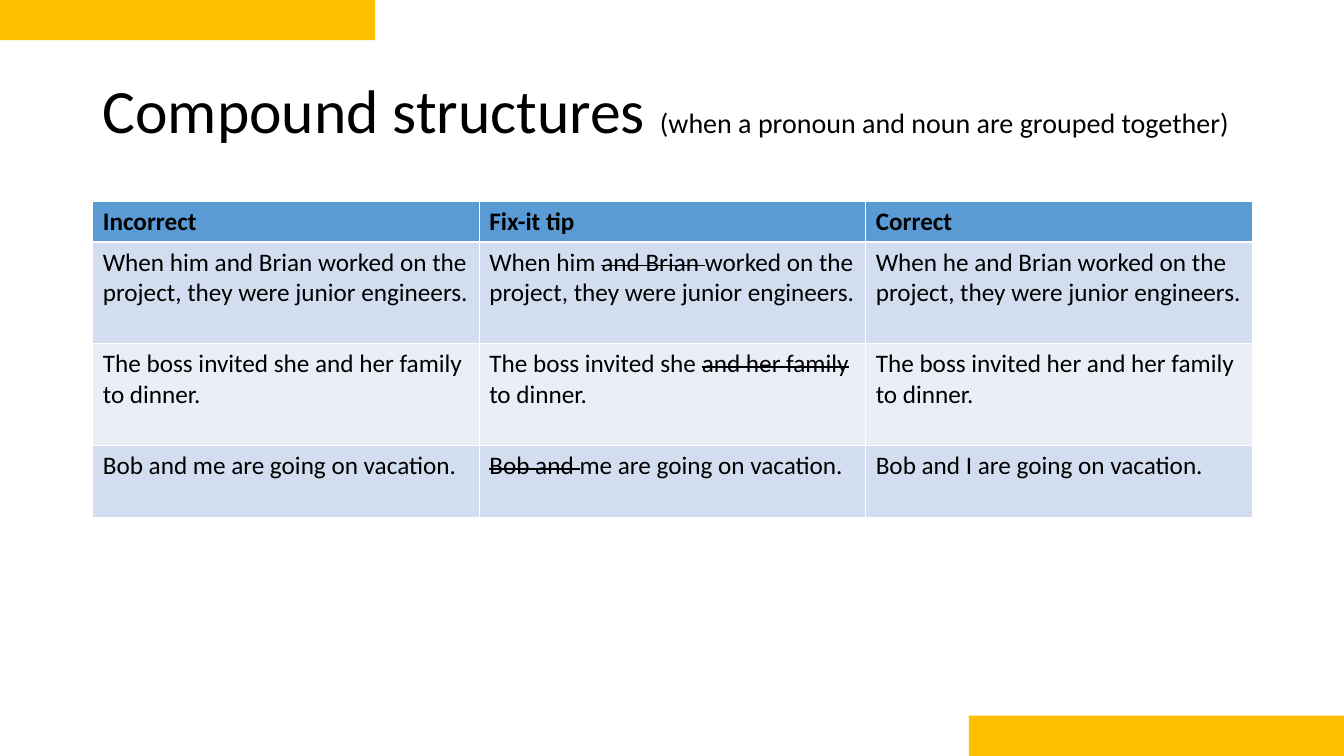
from pptx import Presentation
from pptx.dml.color import RGBColor
from pptx.enum.shapes import MSO_SHAPE
from pptx.enum.text import MSO_ANCHOR
from pptx.util import Inches, Pt

TITLE = [("Compound structures ", 44),
         ("(when a pronoun and noun are grouped together)", 20)]
# Words between tildes are struck through.
ROWS = [
    ("Incorrect", "Fix-it tip", "Correct"),
    ("When him and Brian worked on the project, they were junior engineers.",
     "When him ~and Brian ~worked on the project, they were junior engineers.",
     "When he and Brian worked on the project, they were junior engineers."),
    ("The boss invited she and her family to dinner.",
     "The boss invited she ~and her family~ to dinner.",
     "The boss invited her and her family to dinner."),
    ("Bob and me are going on vacation.",
     "~Bob and ~me are going on vacation.",
     "Bob and I are going on vacation."),
]
HEIGHTS = [0.4, 1.01, 1.01, 0.71]
HEAD, BANDS = "5B9BD5", ["EAEFF7", "D2DEEF"]
WIDE, HIGH = 13.33, 7.5
LEFT, SPAN = 0.92, 11.5
BAR_W, BAR_H = 3.72, 0.4


def paint(fill, color):
    fill.solid()
    fill.fore_color.rgb = RGBColor.from_string(color)


def add_run(para, text, size, bold=False):
    run = para.add_run()
    run.text = text
    font = run.font
    font.name, font.size, font.bold = "Calibri", Pt(size), bold
    paint(font.fill, "000000")
    return run


def add_title(slide):
    box = slide.shapes.add_textbox(
        Inches(LEFT), Inches(0.4), Inches(SPAN), Inches(1.45))
    frame = box.text_frame
    frame.word_wrap = True
    frame.vertical_anchor = MSO_ANCHOR.MIDDLE
    para = frame.paragraphs[0]
    para.line_spacing = 0.9
    for text, size in TITLE:
        add_run(para, text, size)


def add_grid(slide):
    table = slide.shapes.add_table(
        len(ROWS), len(ROWS[0]), Inches(LEFT), Inches(2),
        Inches(SPAN), Inches(sum(HEIGHTS))).table
    for r, texts in enumerate(ROWS):
        table.rows[r].height = Inches(HEIGHTS[r])
        for c, text in enumerate(texts):
            cell = table.cell(r, c)
            paint(cell.fill, BANDS[r % 2] if r else HEAD)
            para = cell.text_frame.paragraphs[0]
            for i, part in enumerate(text.split("~")):
                if part:
                    run = add_run(para, part, 18, r == 0)
                    if i % 2:
                        run.font._element.set("strike", "sngStrike")


def add_bar(slide, left, top):
    bar = slide.shapes.add_shape(
        MSO_SHAPE.RECTANGLE, Inches(left), Inches(top),
        Inches(BAR_W), Inches(BAR_H))
    bar.shadow.inherit = False
    bar.line.fill.background()
    paint(bar.fill, "FFC000")


def main():
    deck = Presentation()
    deck.slide_width, deck.slide_height = Inches(WIDE), Inches(HIGH)
    slide = deck.slides.add_slide(deck.slide_layouts[6])
    add_title(slide)
    add_grid(slide)
    add_bar(slide, 0, 0)
    add_bar(slide, WIDE - BAR_W, HIGH - BAR_H)
    deck.save("out.pptx")


if __name__ == "__main__":
    main()
